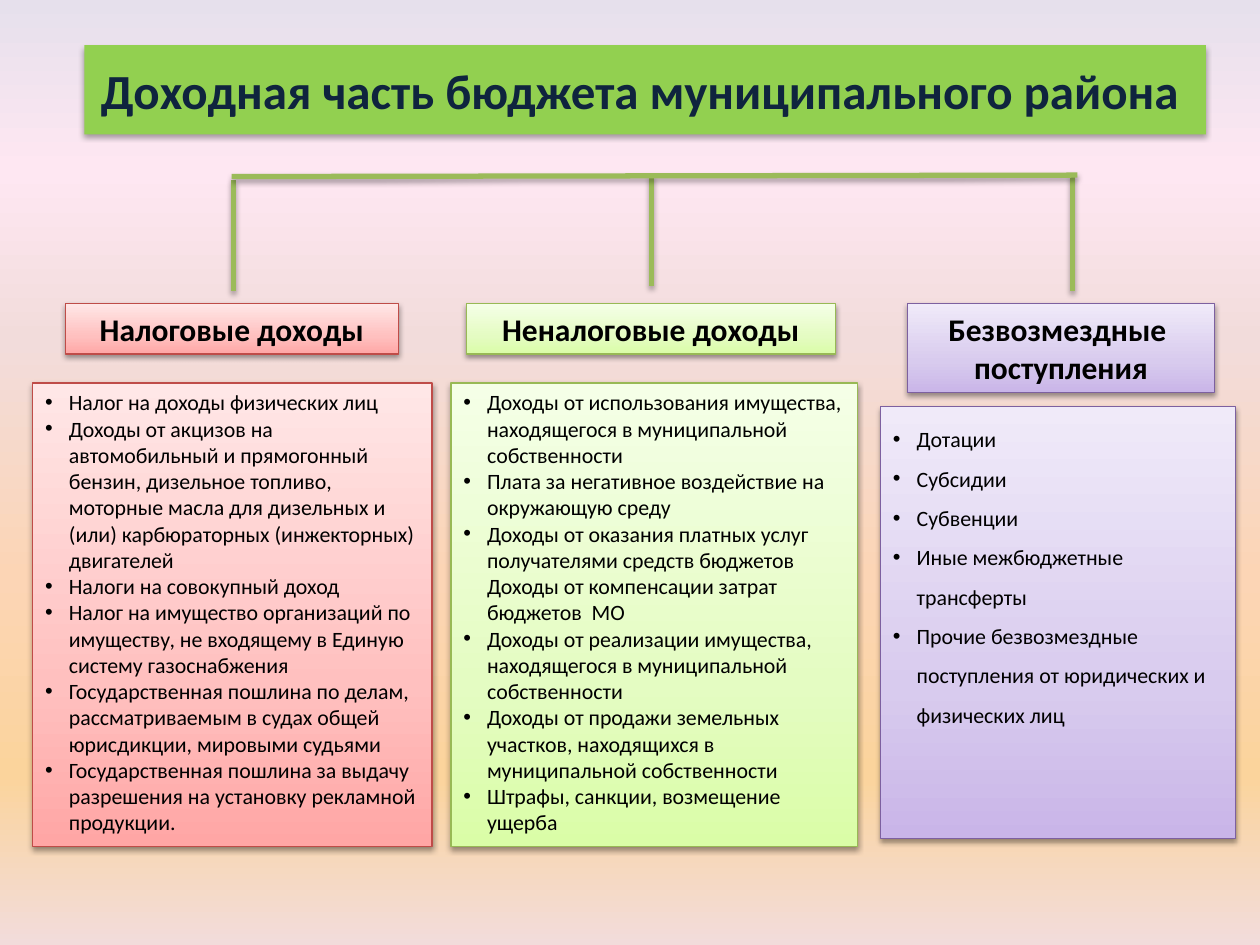
from lxml import etree
from pptx import Presentation
from pptx.dml.color import RGBColor
from pptx.enum.shapes import MSO_CONNECTOR, MSO_SHAPE
from pptx.enum.text import MSO_ANCHOR, MSO_AUTO_SIZE, PP_ALIGN
from pptx.oxml.ns import qn
from pptx.util import Cm, Pt

RECT = MSO_SHAPE.RECTANGLE
STRAIGHT = MSO_CONNECTOR.STRAIGHT
TOP, MIDDLE = MSO_ANCHOR.TOP, MSO_ANCHOR.MIDDLE
LEFT, CENTER = PP_ALIGN.LEFT, PP_ALIGN.CENTER
NO_FIT = MSO_AUTO_SIZE.NONE

COLORS = {
    "title": "92D050",
    "title_text": "0F243E",
    "text": "000000",
    "branch": "9BBB59",
    "tax_line": "BF4C48",
    "nontax_line": "98B955",
    "grants_line": "7D60A0",
}
GRADIENTS = {
    "background": [(0, "E6E0EC"), (18, "FEE7F2"), (36, "F2DCDB"),
                   (61, "FCD5B5"), (82, "FBD49C"), (100, "F2DCDB")],
    "tax": [(0, "FFA6A5"), (35, "FFC0BF"), (100, "FFE7E7")],
    "nontax": [(0, "DAFDA7"), (35, "E4FCC2"), (100, "F5FFE7")],
    "grants": [(0, "C9B5E8"), (35, "D8CBEE"), (100, "F0EAF9")],
}
TITLE_FONT = {"name": "Calibri", "size": Pt(28), "bold": True}
HEAD_FONT = {"name": "Calibri", "size": Pt(18), "bold": True}
ITEM_FONT = {"name": "Calibri", "size": Pt(12.5), "bold": False}

COLUMNS = [
    {
        "kind": "tax", "box": (0.66, 6.12, 8.05, 10.95),
        "head": (0.66, 6.71, 1.02), "body_top": 1.6, "spacing": 1.0,
        "title": ["Налоговые доходы"],
        "items": [
            "Налог на доходы физических лиц",
            "Доходы от акцизов на автомобильный и прямогонный бензин, дизельное топливо, "
            "моторные масла для дизельных и (или) карбюраторных (инжекторных) двигателей",
            "Налоги на совокупный доход",
            "Налог на имущество организаций по имуществу, не входящему в Единую "
            "систему газоснабжения",
            "Государственная пошлина по делам, рассматриваемым в судах общей "
            "юрисдикции, мировыми судьями",
            "Государственная пошлина за выдачу разрешения на установку рекламной продукции.",
        ],
    },
    {
        "kind": "nontax", "box": (9.09, 6.12, 8.2, 10.95),
        "head": (0.31, 7.44, 1.02), "body_top": 1.6, "spacing": 1.0,
        "title": ["Неналоговые доходы"],
        "items": [
            "Доходы от использования имущества, находящегося в муниципальной собственности",
            "Плата за негативное воздействие на окружающую среду",
            "Доходы от оказания платных услуг получателями средств бюджетов "
            "Доходы от компенсации затрат бюджетов  МО",
            "Доходы от реализации имущества, находящегося в муниципальной собственности",
            "Доходы от продажи земельных участков, находящихся в муниципальной собственности",
            "Штрафы, санкции, возмещение ущерба",
        ],
    },
    {
        "kind": "grants", "box": (17.75, 6.12, 7.16, 10.79),
        "head": (0.54, 6.2, 1.8), "body_top": 2.08, "spacing": 1.5,
        "title": ["Безвозмездные ", "поступления"],
        "items": [
            "Дотации",
            "Субсидии",
            "Субвенции",
            "Иные межбюджетные трансферты",
            "Прочие безвозмездные поступления от юридических и физических лиц",
        ],
    },
]


def rgb(name):
    return RGBColor.from_string(COLORS[name])


def set_gradient(fill, element, stops, angle):
    fill.gradient()
    fill.gradient_angle = angle
    gs_list = next(element.iter(qn("a:gsLst")))
    for gs in list(gs_list):
        gs_list.remove(gs)
    for position, color in stops:
        gs = etree.SubElement(gs_list, qn("a:gs"), pos=str(position * 1000))
        etree.SubElement(gs, qn("a:srgbClr"), val=color)


def set_shadow(shape, alpha, distance):
    sp_pr = shape._element.spPr
    effects = sp_pr.find(qn("a:effectLst"))
    if effects is None:
        effects = etree.SubElement(sp_pr, qn("a:effectLst"))
    shadow = etree.SubElement(effects, qn("a:outerShdw"), blurRad=str(Pt(3.1)),
                              dist=str(Pt(distance)), dir="5400000", rotWithShape="0")
    color = etree.SubElement(shadow, qn("a:srgbClr"), val="000000")
    etree.SubElement(color, qn("a:alpha"), val=str(alpha * 1000))


def write_text(shape, lines, font, color, anchor=TOP, align=CENTER, spacing=1.0,
               bullets=False, wrap=True):
    tf = shape.text_frame
    for name, value in {"word_wrap": wrap, "auto_size": NO_FIT,
                        "vertical_anchor": anchor}.items():
        setattr(tf, name, value)
    for i, line in enumerate(lines):
        p = tf.add_paragraph() if i else tf.paragraphs[0]
        p.alignment = align
        p.line_spacing = spacing
        r = p.add_run()
        r.text = line
        for name, value in font.items():
            setattr(r.font, name, value)
        r.font.color.rgb = rgb(color)
        if bullets:
            p_pr = p._p.get_or_add_pPr()
            p_pr.set("marL", str(Cm(0.48)))
            p_pr.set("indent", str(-Cm(0.48)))
            etree.SubElement(p_pr, qn("a:buFont"), typeface="Arial")
            etree.SubElement(p_pr, qn("a:buChar"), char="•")


def add_title(s, x, y, w, h):
    sp = s.shapes.title
    sp.left, sp.top, sp.width, sp.height = Cm(x), Cm(y), Cm(w), Cm(h)
    sp.fill.solid()
    sp.fill.fore_color.rgb = rgb("title")
    set_shadow(sp, 35, 1.8)
    write_text(sp, ["Доходная часть бюджета муниципального района "],
               TITLE_FONT, "title_text", MIDDLE)


def add_branches(s, x, y, w, h):
    lines = [
        (8.46, 0, 8.46, h - 0.1),
        (0.03, 0.1, 0.03, h),
        (w - 0.1, 0, w - 0.1, h),
        (0, 0.03, w, 0),
    ]
    for x1, y1, x2, y2 in lines:
        line = s.shapes.add_connector(STRAIGHT, Cm(x + x1), Cm(y + y1),
                                      Cm(x + x2), Cm(y + y2))
        line.line.color.rgb = rgb("branch")
        line.line.width = Pt(3)
        set_shadow(line, 35, 1.8)


def add_panel(s, kind, x, y, w, h):
    sp = s.shapes.add_shape(RECT, Cm(x), Cm(y), Cm(w), Cm(h))
    set_gradient(sp.fill, sp._element, GRADIENTS[kind], 90)
    sp.line.color.rgb = rgb(kind + "_line")
    sp.line.width = Pt(0.75)
    sp.shadow.inherit = False
    set_shadow(sp, 38, 1.6)
    return sp


def add_column(s, column):
    x, y, w, h = column["box"]
    head_dx, head_w, head_h = column["head"]
    top = column["body_top"]
    body = add_panel(s, column["kind"], x, y + top, w, h - top)
    write_text(body, column["items"], ITEM_FONT, "text", align=LEFT,
               spacing=column["spacing"], bullets=True)
    head = add_panel(s, column["kind"], x + head_dx, y, head_w, head_h)
    write_text(head, column["title"], HEAD_FONT, "text", wrap=False)


def main():
    prs = Presentation()
    prs.slide_width, prs.slide_height = Cm(25.4), Cm(19.05)
    s = prs.slides.add_slide(prs.slide_layouts[5])
    set_gradient(s.background.fill, s._element, GRADIENTS["background"], 270)
    add_title(s, 1.7, 0.91, 22.61, 1.8)
    add_branches(s, 4.67, 3.53, 17.05, 2.34)
    for column in COLUMNS:
        add_column(s, column)
    prs.save("out.pptx")


if __name__ == "__main__":
    main()
